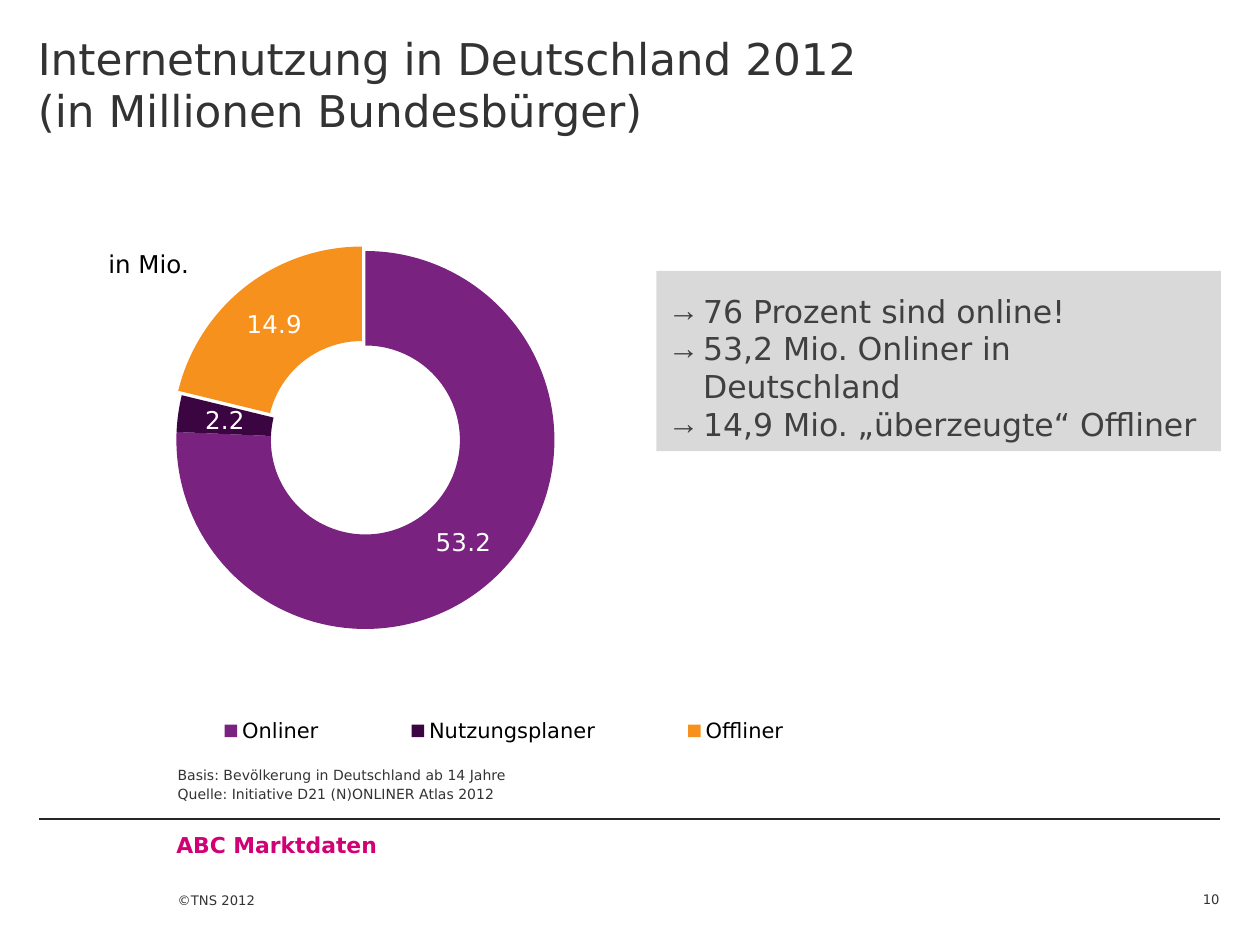
from lxml.etree import SubElement
from pptx import Presentation
from pptx.chart.data import CategoryChartData
from pptx.dml.color import RGBColor
from pptx.enum.chart import XL_CHART_TYPE, XL_LEGEND_POSITION
from pptx.enum.shapes import MSO_CONNECTOR
from pptx.enum.text import MSO_ANCHOR, MSO_AUTO_SIZE, PP_ALIGN
from pptx.oxml import parse_xml
from pptx.oxml.ns import nsdecls, qn
from pptx.util import Inches, Pt

TEXT_COLOR = "333333"


def paint(color_format, color):
    color_format.rgb = RGBColor.from_string(color)


def manual_layout(x, y, width, height, inner=False):
    target = '<c:layoutTarget val="inner"/>' if inner else ""
    return parse_xml(
        f'<c:layout {nsdecls("c")}><c:manualLayout>{target}'
        '<c:xMode val="edge"/><c:yMode val="edge"/>'
        f'<c:x val="{x}"/><c:y val="{y}"/><c:w val="{width}"/><c:h val="{height}"/>'
        '</c:manualLayout></c:layout>')


class SlideBuilder:
    font_name = "DejaVu Sans"

    def __init__(self, page):
        self.page = page

    def style(self, font, size, color, bold=False):
        font.name = self.font_name
        font.size = Pt(size)
        font.bold = bold
        paint(font.color, color)

    def fill_text(self, frame, text, size=8, color=TEXT_COLOR, bold=False, gap=0,
                  align=PP_ALIGN.LEFT, anchor=MSO_ANCHOR.TOP, insets=(0, 0, 0, 0),
                  bullet=None):
        """Fill a frame, one paragraph per line; a vertical tab breaks a line inside one."""
        frame.word_wrap = True
        frame.auto_size = MSO_AUTO_SIZE.NONE
        frame.vertical_anchor = anchor
        (frame.margin_left, frame.margin_top,
         frame.margin_right, frame.margin_bottom) = map(Inches, insets)
        frame.text = text
        for index, para in enumerate(frame.paragraphs):
            para.alignment = align
            para.space_before = Pt(gap if index else 0)
            if bullet:
                properties = para._p.get_or_add_pPr()
                properties.set("marL", str(Inches(0.28)))
                properties.set("indent", str(-Inches(0.28)))
                SubElement(properties, qn("a:buChar")).set("char", bullet)
            for span in para.runs:
                self.style(span.font, size, color, bold)

    def text_box(self, text, left, top, width, height, **style):
        box = self.page.shapes.add_textbox(*map(Inches, (left, top, width, height)))
        self.fill_text(box.text_frame, text, **style)

    def placeholder(self, index, text, left, top, width, height, fill=None, **style):
        box = self.page.placeholders[index]
        box.left, box.top, box.width, box.height = map(Inches, (left, top, width, height))
        if fill:
            box.fill.solid()
            paint(box.fill.fore_color, fill)
        self.fill_text(box.text_frame, text, **style)

    def line(self, left, top, right, bottom, color, width):
        rule = self.page.shapes.add_connector(
            MSO_CONNECTOR.STRAIGHT, *map(Inches, (left, top, right, bottom)))
        paint(rule.line.color, color)
        rule.line.width = Pt(width)
        SubElement(rule._element.spPr, qn("a:effectLst"))

    def doughnut(self, slices, exploded, left, top, width, height):
        """Draw (name, value, colour) slices, pulling the one at index exploded outwards."""
        chart_data = CategoryChartData()
        chart_data.categories = [name for name, _, _ in slices]
        chart_data.add_series("Series 1", [value for _, value, _ in slices])
        chart = self.page.shapes.add_chart(
            XL_CHART_TYPE.DOUGHNUT, *map(Inches, (left, top, width, height)), chart_data).chart
        self.style(chart.font, 18, "000000")
        chart.has_title = False

        chart.has_legend = True
        legend = chart.legend
        legend.position = XL_LEGEND_POSITION.RIGHT
        legend.include_in_layout = False
        self.style(legend.font, 12, "000000")
        for old in legend._element.findall(qn("c:layout")):
            legend._element.remove(old)
        legend._element.find(qn("c:legendPos")).addnext(manual_layout(0.11, 0.84, 0.58, 0.06))

        plot = chart.plots[0]
        plot.vary_by_categories = True
        plot_area = plot._element.getparent()
        for old in plot_area.findall(qn("c:layout")):
            plot_area.remove(old)
        plot_area.insert(0, manual_layout(0.14, 0.16, 0.3, 0.56, inner=True))
        plot._element.find(qn("c:holeSize")).set("val", "40")

        plot.has_data_labels = True
        labels = plot.data_labels
        labels.show_value = True
        labels.show_percentage = False
        labels.number_format = "#,##0.0"
        labels.number_format_is_linked = False
        self.style(labels.font, 14, "FFFFFF")

        series = plot.series[0]
        for index, (_, _, color) in enumerate(slices):
            fill = series.points[index].format.fill
            fill.solid()
            paint(fill.fore_color, color)
        point = series._element.findall(qn("c:dPt"))[exploded]
        explosion = parse_xml(f'<c:explosion {nsdecls("c")} val="6"/>')
        point.find(qn("c:spPr")).addprevious(explosion)


def main():
    deck = Presentation()
    deck.slide_width, deck.slide_height = Inches(10), Inches(7.5)
    builder = SlideBuilder(deck.slides.add_slide(deck.slide_layouts[1]))

    builder.placeholder(
        0, "Internetnutzung in Deutschland 2012\v(in Millionen Bundesbürger)",
        0.2, 0.2, 9.61, 0.94, size=25, insets=(0.1, 0.05, 0.1, 0.05))
    builder.doughnut(
        [("Onliner", 53.2, "7A2280"), ("Nutzungsplaner", 2.2, "3B0541"),
         ("Offliner", 14.9, "F7911E")], 2, 0, 1.13, 10, 5.37)
    builder.text_box("in Mio.", 0.86, 1.98, 0.91, 0.24, size=14, color="000000")
    builder.placeholder(
        1, "76 Prozent sind online!\n53,2 Mio. Onliner in Deutschland\n"
        "14,9 Mio. „überzeugte“ Offliner",
        5.21, 2.15, 4.48, 1.43, fill="D9D9D9", size=18, color="404040", bullet="→",
        anchor=MSO_ANCHOR.MIDDLE, insets=(0.09, 0.14, 0.09, 0.04))

    builder.text_box(
        "Basis: Bevölkerung in Deutschland ab 14 Jahre\n"
        "Quelle: Initiative D21 (N)ONLINER Atlas 2012",
        1.41, 6.09, 8.27, 0.4, gap=1.6, anchor=MSO_ANCHOR.BOTTOM, insets=(0, 0, 0, 0.12))
    builder.line(0.31, 6.5, 9.68, 6.5, "262626", 0.75)
    builder.text_box("ABC Marktdaten", 0.86, 6.5, 8.26, 0.41, size=12.5, color="D10074",
                     bold=True, insets=(0.54, 0.1, 0.1, 0.05))
    builder.text_box("©TNS 2012", 1.41, 6.92, 0.83, 0.58, size=7.5,
                     anchor=MSO_ANCHOR.BOTTOM, insets=(0, 0, 0, 0.29))
    builder.text_box("10", 9.13, 6.92, 0.55, 0.28, size=7.5,
                     align=PP_ALIGN.RIGHT, anchor=MSO_ANCHOR.BOTTOM)
    deck.save("out.pptx")


if __name__ == "__main__":
    main()
